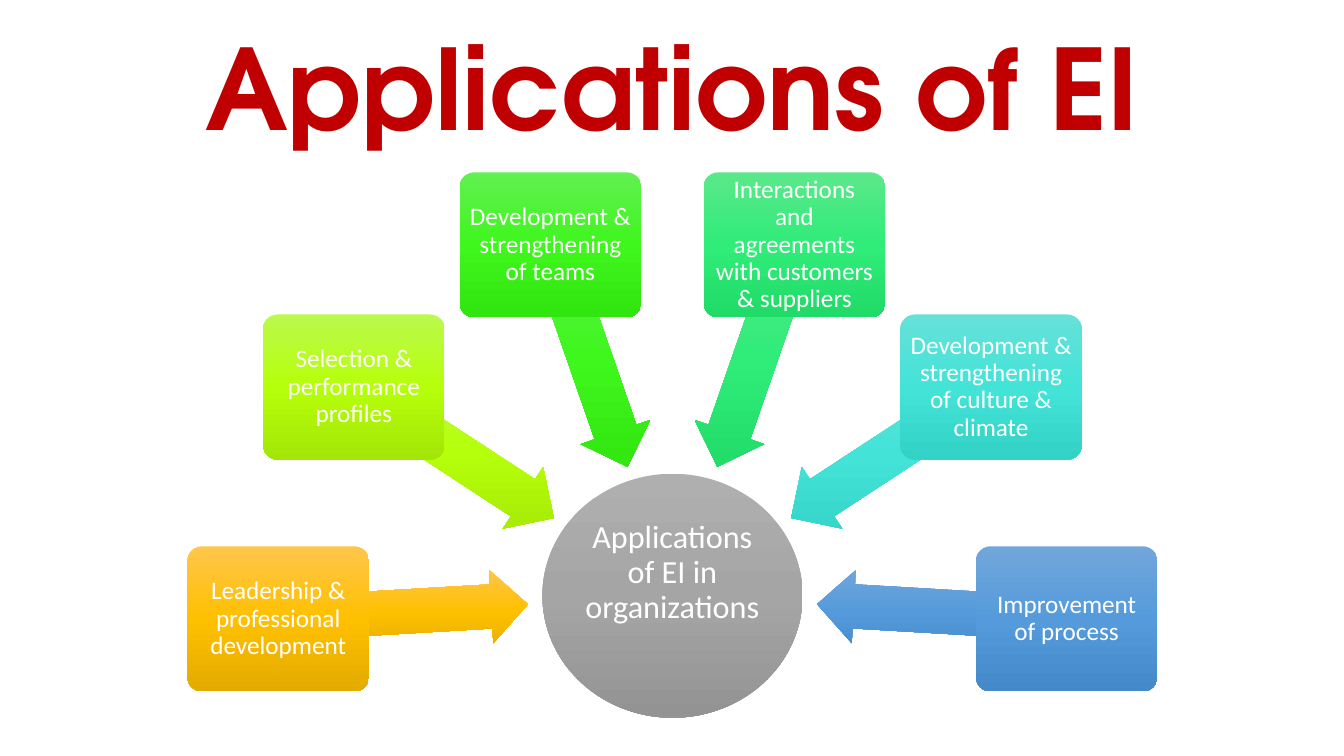
from copy import deepcopy
from math import atan2, cos, degrees, sin

from pptx import Presentation
from pptx.dml.color import RGBColor
from pptx.enum.shapes import MSO_SHAPE
from pptx.enum.text import MSO_ANCHOR, PP_ALIGN
from pptx.oxml.ns import qn
from pptx.util import Inches, Pt

ELLIPSE, ARROW, BOX = MSO_SHAPE.OVAL, MSO_SHAPE.LEFT_ARROW, MSO_SHAPE.ROUNDED_RECTANGLE
CENTER, MIDDLE = PP_ALIGN.CENTER, MSO_ANCHOR.MIDDLE

COLORS = {
    "title": "C00000", "text": "FFFFFF",
    "gray": ("AFAFAF", "A5A5A5", "939393"),
    "gold": ("FFC64B", "FFC000", "E3AB00"),
    "lime": ("BBF94D", "B6FF0A", "A3E506"),
    "green": ("62F052", "3FF61D", "31E50F"),
    "emerald": ("5BE88A", "30EC79", "21DB69"),
    "turquoise": ("66E1D8", "43E3D8", "33D2C7"),
    "blue": ("71A6DB", "559BDB", "448ACA"),
}
HUB_X, HUB_Y = 6.67, 5.91
BOX_W, BOX_H, ARROW_H = 1.8, 1.44, 0.73

prs = Presentation()
prs.slide_width, prs.slide_height = Inches(13.33), Inches(7.5)
slide = prs.slides.add_slide(prs.slide_layouts[5])


def add_part(kind, cx, cy, w, h, color):
    """Add a centred shape with a top-to-bottom gradient."""
    sp = slide.shapes.add_shape(kind, Inches(cx - w / 2), Inches(cy - h / 2), Inches(w), Inches(h))
    sp.shadow.inherit = False
    sp.line.fill.background()
    sp.fill.gradient()
    sp.fill.gradient_angle = 270
    grad = sp.element.spPr.find(qn("a:gradFill"))
    grad.set("rotWithShape", "0")
    stops = grad.find(qn("a:gsLst"))
    stops.insert(1, deepcopy(stops[0]))
    for i, stop in enumerate(sp.fill.gradient_stops):
        stop.position = i / 2
        stop.color.rgb = RGBColor.from_string(COLORS[color][i])
    return sp


def write(sp, text, size, font, color, inset):
    """Put one centred paragraph into a shape."""
    tf = sp.text_frame
    tf.word_wrap = True
    tf.vertical_anchor = MIDDLE
    tf.margin_left = tf.margin_right = tf.margin_top = tf.margin_bottom = Inches(inset)
    tf.text = text
    p = tf.paragraphs[0]
    p.alignment = CENTER
    p.line_spacing = 0.9
    p.font.size, p.font.name = Pt(size), font
    p.font.color.rgb = RGBColor.from_string(COLORS[color])


# Title
title = slide.shapes.title
title.left, title.top, title.width, title.height = map(Inches, (0.92, 0.21, 11.5, 1.45))
write(title, "Applications of EI", 80, "TeX Gyre Adventor", "title", 0.05)
title.text_frame.paragraphs[0].font.bold = True

# Hub
hub = add_part(ELLIPSE, HUB_X, HUB_Y, 2.58, 2.42, "gray")
write(hub, "Applications of EI in organizations", 23, "Calibri", "text", 0.02)
hub.text_frame.margin_bottom = Inches(0.47)

# Spokes: box offset from the hub, arrow length, colour, text
spokes = [
    (-3.91, 0.23, 2.48, "gold", "Leadership & professional development"),
    (-3.16, -2.07, 2.37, "lime", "Selection & performance profiles"),
    (-1.21, -3.48, 2.33, "green", "Development & strengthening of teams"),
    (1.21, -3.48, 2.33, "emerald", "Interactions and agreements with customers & suppliers"),
    (3.16, -2.07, 2.37, "turquoise", "Development & strengthening of culture & climate"),
    (3.91, 0.23, 2.48, "blue", "Improvement of process"),
]
for dx, dy, length, color, text in spokes:
    x, y, angle = HUB_X + dx, HUB_Y + dy, atan2(dy, dx)
    # The arrow runs from the middle of the box towards the hub
    arrow = add_part(ARROW, x - cos(angle) * length / 2, y - sin(angle) * length / 2,
                     length, ARROW_H, color)
    arrow.adjustments[0], arrow.adjustments[1] = 0.6, 0.5
    arrow.rotation = degrees(angle) % 360
    box = add_part(BOX, x, y, BOX_W, BOX_H, color)
    box.adjustments[0] = 0.1
    write(box, text, 18, "Calibri", "text", 0.04)

prs.save("out.pptx")
